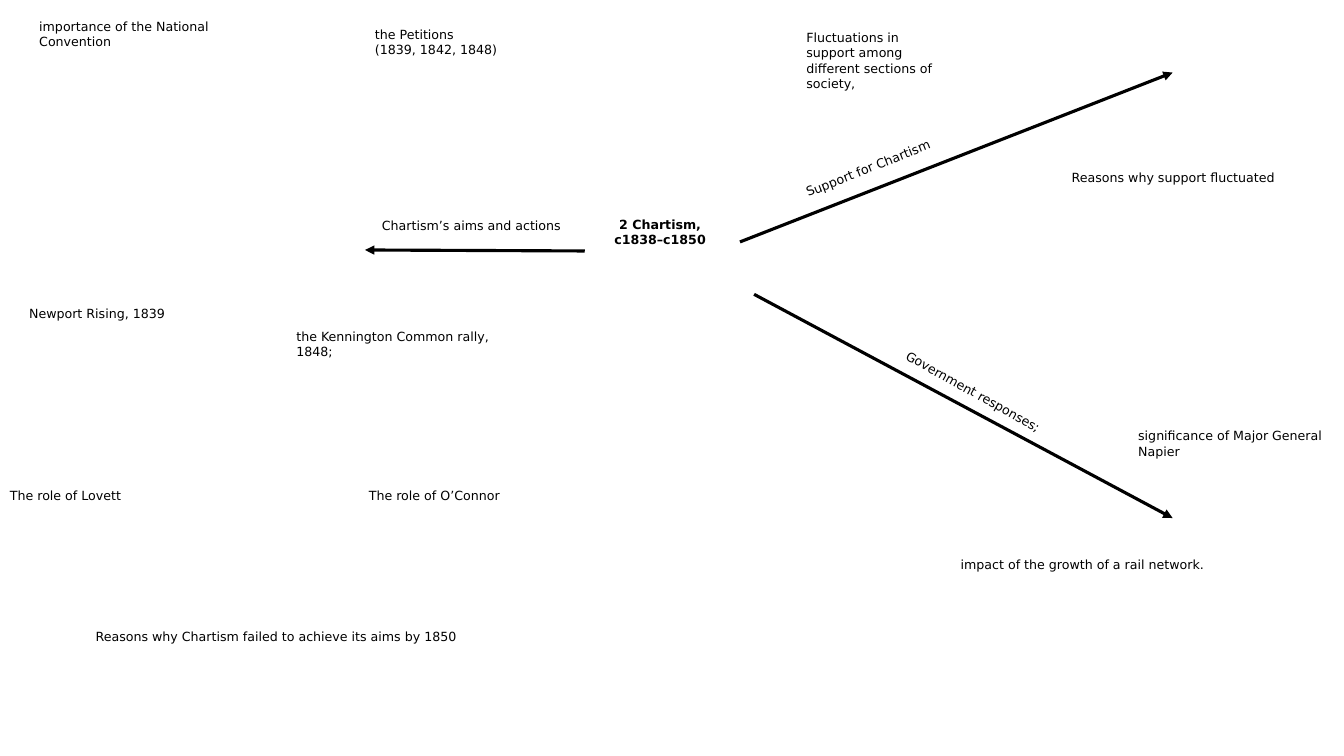
from lxml import etree
from pptx import Presentation
from pptx.dml.color import RGBColor
from pptx.enum.shapes import MSO_CONNECTOR
from pptx.enum.text import MSO_AUTO_SIZE, PP_ALIGN
from pptx.oxml.ns import qn
from pptx.util import Inches, Pt

STRAIGHT = MSO_CONNECTOR.STRAIGHT
FIT_SHAPE = MSO_AUTO_SIZE.SHAPE_TO_FIT_TEXT
LEFT, CENTER = PP_ALIGN.LEFT, PP_ALIGN.CENTER
COLORS = {"ink": "000000"}
SLIDE_WIDTH, SLIDE_HEIGHT = 13.33, 7.5
HALF = 50


class MindMap:
    font_name = "DejaVu Sans"
    font_size = Pt(9)
    arrow_width = Pt(2.25)
    line_height = 0.15
    padding = 0.1

    def __init__(self, slide):
        self.slide = slide
        self.ink = RGBColor.from_string(COLORS["ink"])

    def x(self, percent):
        return Inches(SLIDE_WIDTH * percent / 100)

    def y(self, percent):
        return Inches(SLIDE_HEIGHT * percent / 100)

    def label(self, text, left, top, width, rows=None, wrap=True,
              rotation=0, bold=False, align=LEFT):
        lines = text.split("\n")
        height = Inches(self.padding + self.line_height * (rows or len(lines)))
        box = self.slide.shapes.add_textbox(
            self.x(left), self.y(top), self.x(width), height)
        box.rotation = rotation
        frame = box.text_frame
        frame.word_wrap = wrap
        frame.auto_size = FIT_SHAPE
        frame.text = text
        for paragraph in frame.paragraphs:
            paragraph.alignment = align
            paragraph.font.name = self.font_name
            paragraph.font.size = self.font_size
            paragraph.font.bold = bold
            paragraph.font.color.rgb = self.ink

    def arrow(self, start, end):
        branch = self.slide.shapes.add_connector(
            STRAIGHT, self.x(start[0]), self.y(start[1]),
            self.x(end[0]), self.y(end[1]))
        branch.line.color.rgb = self.ink
        branch.line.width = self.arrow_width
        outline = branch.line._get_or_add_ln()
        etree.SubElement(outline, qn("a:tailEnd"), type="triangle")
        etree.SubElement(branch._element.spPr, qn("a:effectLst"))


def main():
    deck = Presentation()
    deck.slide_width = Inches(SLIDE_WIDTH)
    deck.slide_height = Inches(SLIDE_HEIGHT)
    chartism = MindMap(deck.slides.add_slide(deck.slide_layouts[6]))

    chartism.label("2 Chartism,\nc1838–c1850", 40, 28, 18.23,
                   bold=True, align=CENTER)

    chartism.arrow((43.51, 33.2), (27.16, 33.07))
    chartism.label("Chartism’s aims and actions", 27.68, 28.13, 14.93, wrap=False)
    chartism.label("importance of the National\nConvention", 2.18, 1.87, HALF)
    chartism.label("Newport Rising, 1839", 1.43, 39.87, 11.78, wrap=False)
    chartism.label("the Petitions\n(1839, 1842, 1848)", 27.16, 2.93, HALF)
    chartism.label("the Kennington Common rally,\n1848;", 21.31, 42.8, HALF)
    chartism.label("The role of Lovett", 0, 63.87, 10.28, wrap=False)
    chartism.label("The role of O’Connor", 26.71, 63.87, 11.4, wrap=False)
    chartism.label("Reasons why Chartism failed to achieve its aims by 1850",
                   6.38, 82.53, 31.13)

    chartism.label("Reasons why support fluctuated", 79, 21.87, 17.85)
    chartism.label("Fluctuations in support among different sections of society,",
                   59.26, 3.33, 12.08, rows=4)
    chartism.arrow((55.06, 32), (87.25, 9.6))
    chartism.label("Support for Chartism", 58.06, 12.53, 35.71, rotation=338.3)

    chartism.label("Government responses;", 66.02, 50.4, 13.35,
                   wrap=False, rotation=29)
    chartism.arrow((56.11, 38.93), (87.25, 68.53))
    chartism.label("significance of Major General\nNapier", 83.95, 56, 16.05)
    chartism.label("impact of the growth of a rail network.",
                   70.74, 73.07, 19.95, wrap=False)

    deck.save("out.pptx")


if __name__ == "__main__":
    main()
